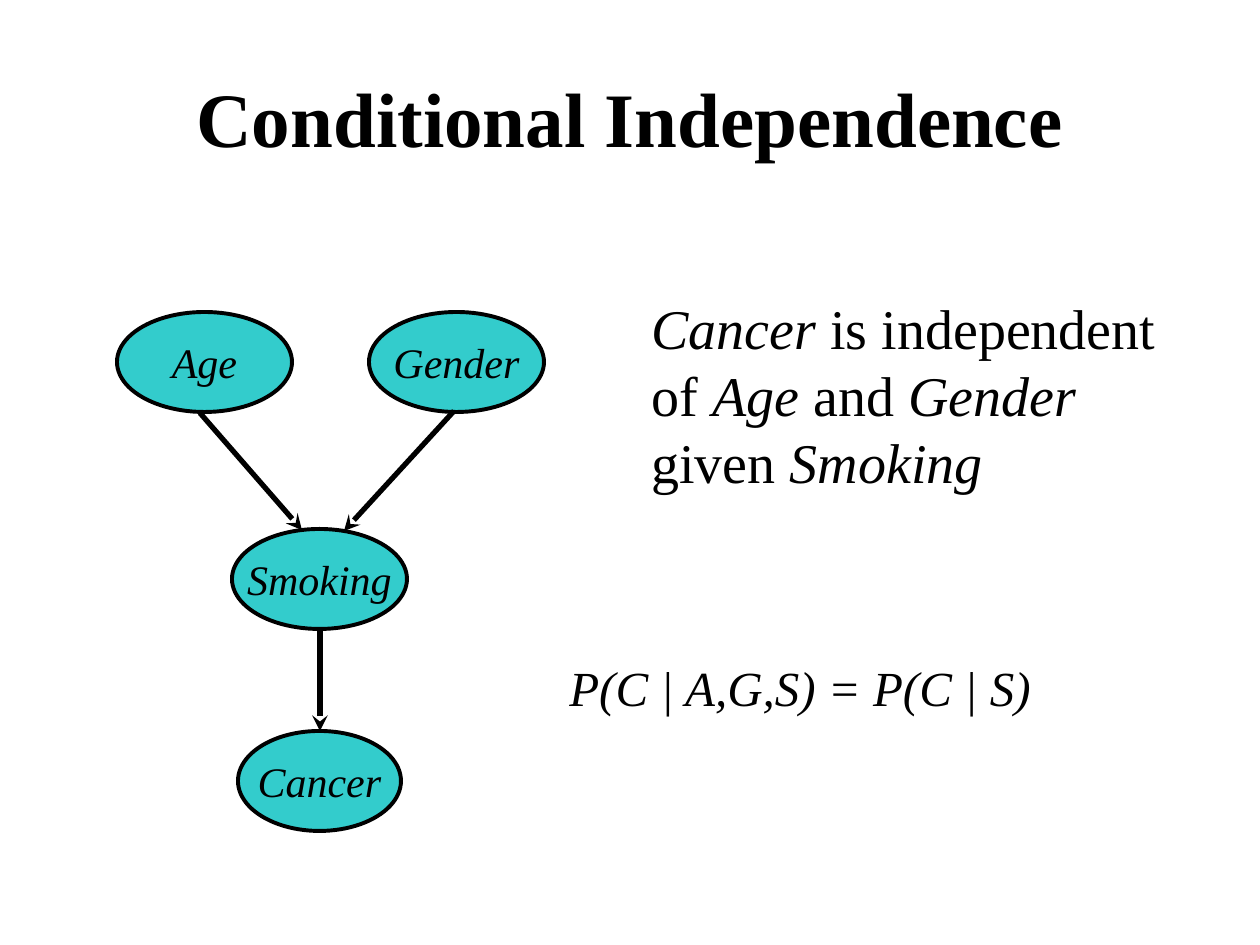
"""Build the conditional independence slide with its Bayesian network."""
from dataclasses import dataclass

import pptx
import pptx.dml.color
import pptx.enum.shapes
import pptx.enum.text
import pptx.oxml.ns
import pptx.util
from lxml import etree

PX_PER_INCH = 126
FONT = "Times New Roman"
COLORS = {"ink": "000000", "node": "33CCCC", "page": "FFFFFF"}


@dataclass
class Node:
    label: str
    x: int
    y: int
    w: int = 175
    h: int = 100


@dataclass
class Arrow:
    x1: int
    y1: int
    x2: int
    y2: int


NODES = [
    Node("Smoking", 232, 529),
    Node("Gender", 369, 312),
    Node("Age", 117, 312),
    Node("Cancer", 238, 731, w=163),
]
ARROWS = [
    Arrow(454, 411, 344, 531),
    Arrow(200, 413, 302, 530),
    Arrow(320, 631, 320, 731),
]
STATEMENT = [
    ("Cancer", True),
    (" is independent of ", False),
    ("Age", True),
    (" and ", False),
    ("Gender", True),
    (" given ", False),
    ("Smoking", True),
]
FORMULA = [("P(C | A,G,S) = P(C | S)", True)]


def px(n: int) -> int:
    return pptx.util.Emu(round(n * pptx.util.Inches(1) / PX_PER_INCH))


def rgb(name: str) -> pptx.dml.color.RGBColor:
    return pptx.dml.color.RGBColor.from_string(COLORS[name])


def style_run(r, size: int, bold: bool = False, italic: bool = False) -> None:
    r.font.name = FONT
    r.font.size = pptx.util.Pt(size)
    r.font.bold = bold
    r.font.italic = italic
    r.font.color.rgb = rgb("ink")


def add_title(s, text: str) -> None:
    sp = s.shapes.title
    sp.left, sp.top, sp.width, sp.height = px(63), px(38), px(1134), px(158)
    tf = sp.text_frame
    tf.text = text
    tf.vertical_anchor = pptx.enum.text.MSO_ANCHOR.MIDDLE
    p = tf.paragraphs[0]
    p.alignment = pptx.enum.text.PP_ALIGN.CENTER
    style_run(p.runs[0], 44, bold=True)


def add_node(s, node: Node) -> None:
    sp = s.shapes.add_shape(
        pptx.enum.shapes.MSO_SHAPE.OVAL, px(node.x), px(node.y), px(node.w), px(node.h)
    )
    sp.shadow.inherit = False
    sp.fill.solid()
    sp.fill.fore_color.rgb = rgb("node")
    sp.line.color.rgb = rgb("ink")
    sp.line.width = pptx.util.Pt(2.25)
    tf = sp.text_frame
    tf.text = node.label
    tf.word_wrap = False
    tf.vertical_anchor = pptx.enum.text.MSO_ANCHOR.MIDDLE
    p = tf.paragraphs[0]
    p.alignment = pptx.enum.text.PP_ALIGN.CENTER
    style_run(p.runs[0], 24, italic=True)


def add_arrow(s, arrow: Arrow) -> None:
    cxn = s.shapes.add_connector(
        pptx.enum.shapes.MSO_CONNECTOR.STRAIGHT,
        px(arrow.x1), px(arrow.y1), px(arrow.x2), px(arrow.y2),
    )
    cxn.line.color.rgb = rgb("ink")
    cxn.line.width = pptx.util.Pt(3)
    qn = pptx.oxml.ns.qn
    sp_pr = cxn.element.spPr
    etree.SubElement(sp_pr.find(qn("a:ln")), qn("a:tailEnd"), type="stealth")
    etree.SubElement(sp_pr, qn("a:effectLst"))


def add_text(s, x: int, y: int, w: int, h: int, parts: list[tuple[str, bool]],
             size: int, wrap: bool) -> None:
    tf = s.shapes.add_textbox(px(x), px(y), px(w), px(h)).text_frame
    tf.word_wrap = wrap
    tf.auto_size = pptx.enum.text.MSO_AUTO_SIZE.SHAPE_TO_FIT_TEXT
    p = tf.paragraphs[0]
    for text, italic in parts:
        r = p.add_run()
        r.text = text
        style_run(r, size, italic=italic)


def main() -> None:
    prs = pptx.Presentation()
    prs.slide_width, prs.slide_height = px(1260), px(945)
    s = prs.slides.add_slide(prs.slide_layouts[5])
    s.background.fill.solid()
    s.background.fill.fore_color.rgb = rgb("page")
    add_title(s, "Conditional Independence")
    for node in NODES:
        add_node(s, node)
    for arrow in ARROWS:
        add_arrow(s, arrow)
    add_text(s, 639, 287, 553, 217, STATEMENT, 32, wrap=True)
    add_text(s, 557, 651, 495, 72, FORMULA, 28, wrap=False)
    prs.save("out.pptx")


if __name__ == "__main__":
    main()
